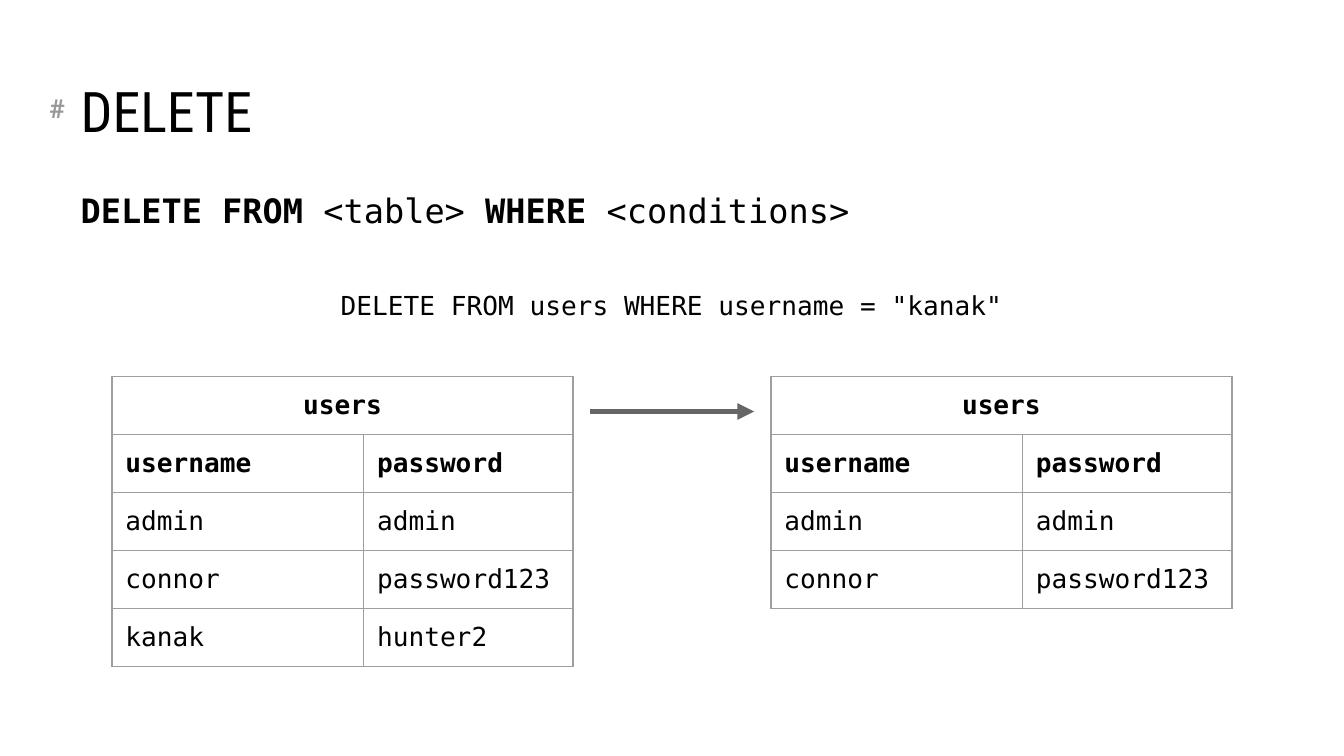
from dataclasses import dataclass

from lxml import etree
from pptx import Presentation
from pptx.dml.color import RGBColor
from pptx.enum import shapes, text
from pptx.oxml import ns
from pptx.util import Pt


@dataclass(frozen=True)
class Theme:
    ink: RGBColor = RGBColor(0x00, 0x00, 0x00)
    paper: RGBColor = RGBColor(0xFF, 0xFF, 0xFF)
    marker: RGBColor = RGBColor(0x99, 0x99, 0x99)
    arrow: RGBColor = RGBColor(0x66, 0x66, 0x66)
    border: str = "9E9E9E"
    heading_font: str = "Roboto Condensed"
    marker_font: str = "Roboto"
    code_font: str = "DejaVu Sans Mono"
    title_size: int = 30
    syntax_size: int = 18
    code_size: int = 14


@dataclass(frozen=True)
class Box:
    left: float
    top: float
    width: float
    height: float

    def lengths(self) -> tuple:
        return Pt(self.left), Pt(self.top), Pt(self.width), Pt(self.height)


@dataclass(frozen=True)
class UsersTable:
    left: float
    records: tuple


THEME = Theme()
INSET = 7.2
TABLE_TOP = 201.6
ROW_HEIGHT = 31.1
COLUMN_WIDTHS = (134.8, 112.2)
HEADINGS = ("username", "password")
KEPT = (("admin", "admin"), ("connor", "password123"))
DELETED = (("kanak", "hunter2"),)
BEFORE = UsersTable(60, KEPT + DELETED)
AFTER = UsersTable(413, KEPT)
SYNTAX = (("DELETE FROM", True), (" <table> ", False),
          ("WHERE", True), (" <conditions>", False))


def style(paragraph, font: str, size: int, color=THEME.ink, bold=None,
          align=text.PP_ALIGN.LEFT) -> None:
    paragraph.font.name = font
    paragraph.font.size = Pt(size)
    paragraph.font.color.rgb = color
    paragraph.font.bold = bold
    paragraph.alignment = align


def set_frame(shape, box: Box, anchor=text.MSO_ANCHOR.TOP):
    """Place a text shape, set its insets and return its first paragraph."""
    shape.left, shape.top, shape.width, shape.height = box.lengths()
    frame = shape.text_frame
    frame.word_wrap = True
    frame.auto_size = text.MSO_AUTO_SIZE.NONE
    frame.vertical_anchor = anchor
    frame.margin_left = frame.margin_right = Pt(INSET)
    frame.margin_top = frame.margin_bottom = Pt(INSET)
    return frame.paragraphs[0]


def add_text(slide, box: Box, content: str):
    paragraph = set_frame(slide.shapes.add_textbox(*box.lengths()), box)
    paragraph.text = content
    return paragraph


def add_title(slide) -> None:
    paragraph = set_frame(slide.shapes.title, Box(36, 16.6, 648, 67.7),
                          text.MSO_ANCHOR.BOTTOM)
    paragraph.text = "DELETE"
    style(paragraph, THEME.heading_font, THEME.title_size)


def add_syntax(slide) -> None:
    paragraph = set_frame(slide.placeholders[1], Box(36, 94.3, 648, 293))
    for content, bold in SYNTAX:
        run = paragraph.add_run()
        run.text = content
        run.font.bold = bold
    style(paragraph, THEME.code_font, THEME.syntax_size)
    paragraph.space_before = Pt(0)
    properties = paragraph._p.get_or_add_pPr()
    properties.set("marL", "0")
    properties.set("indent", "0")
    properties.insert_element_before(
        properties.makeelement(ns.qn("a:buNone")),
        "a:tabLst", "a:defRPr", "a:extLst")


def border_cell(cell) -> None:
    properties = cell._tc.get_or_add_tcPr()
    for position, side in enumerate(("lnL", "lnR", "lnT", "lnB")):
        line = properties.makeelement(ns.qn(f"a:{side}"), {"w": str(Pt(0.75))})
        fill = etree.SubElement(line, ns.qn("a:solidFill"))
        etree.SubElement(fill, ns.qn("a:srgbClr"), val=THEME.border)
        properties.insert(position, line)


def add_users(slide, users: UsersTable) -> None:
    rows = (("users", ""), HEADINGS) + users.records
    box = Box(users.left, TABLE_TOP, sum(COLUMN_WIDTHS),
              ROW_HEIGHT * len(rows))
    table = slide.shapes.add_table(len(rows), len(COLUMN_WIDTHS),
                                   *box.lengths()).table
    table.first_row = table.horz_banding = False
    for column, width in zip(table.columns, COLUMN_WIDTHS):
        column.width = Pt(width)
    for r, values in enumerate(rows):
        table.rows[r].height = Pt(ROW_HEIGHT)
        for c, value in enumerate(values):
            cell = table.cell(r, c)
            cell.fill.background()
            cell.margin_left = cell.margin_right = Pt(INSET)
            cell.margin_top = cell.margin_bottom = Pt(INSET)
            paragraph = cell.text_frame.paragraphs[0]
            paragraph.text = value
            align = text.PP_ALIGN.CENTER if r == 0 else text.PP_ALIGN.LEFT
            style(paragraph, THEME.code_font, THEME.code_size,
                  bold=r < 2, align=align)
            border_cell(cell)
    table.cell(0, 0).merge(table.cell(0, 1))


def add_arrow(slide, start: float, end: float, y: float) -> None:
    arrow = slide.shapes.add_connector(shapes.MSO_CONNECTOR.STRAIGHT,
                                       Pt(start), Pt(y), Pt(end), Pt(y))
    arrow.line.color.rgb = THEME.arrow
    arrow.line.width = Pt(3)
    etree.SubElement(arrow.line._get_or_add_ln(), ns.qn("a:tailEnd"),
                     type="triangle")
    etree.SubElement(arrow._element.spPr, ns.qn("a:effectLst"))


def main() -> None:
    deck = Presentation()
    deck.slide_width, deck.slide_height = Pt(720), Pt(405)
    slide = deck.slides.add_slide(deck.slide_layouts[1])
    slide.background.fill.solid()
    slide.background.fill.fore_color.rgb = THEME.paper

    marker = add_text(slide, Box(19.4, 42.5, 22.3, 33.8), "#")
    style(marker, THEME.marker_font, THEME.code_size, THEME.marker, bold=True)
    add_title(slide)
    add_syntax(slide)
    add_users(slide, BEFORE)
    example = add_text(slide, Box(36, 147.6, 648, 31.7),
                       'DELETE FROM users WHERE username = "kanak"')
    style(example, THEME.code_font, THEME.code_size,
          align=text.PP_ALIGN.CENTER)
    example.space_after = Pt(10)
    add_arrow(slide, 316, 404, 220.5)
    add_users(slide, AFTER)
    deck.save("out.pptx")


if __name__ == "__main__":
    main()
